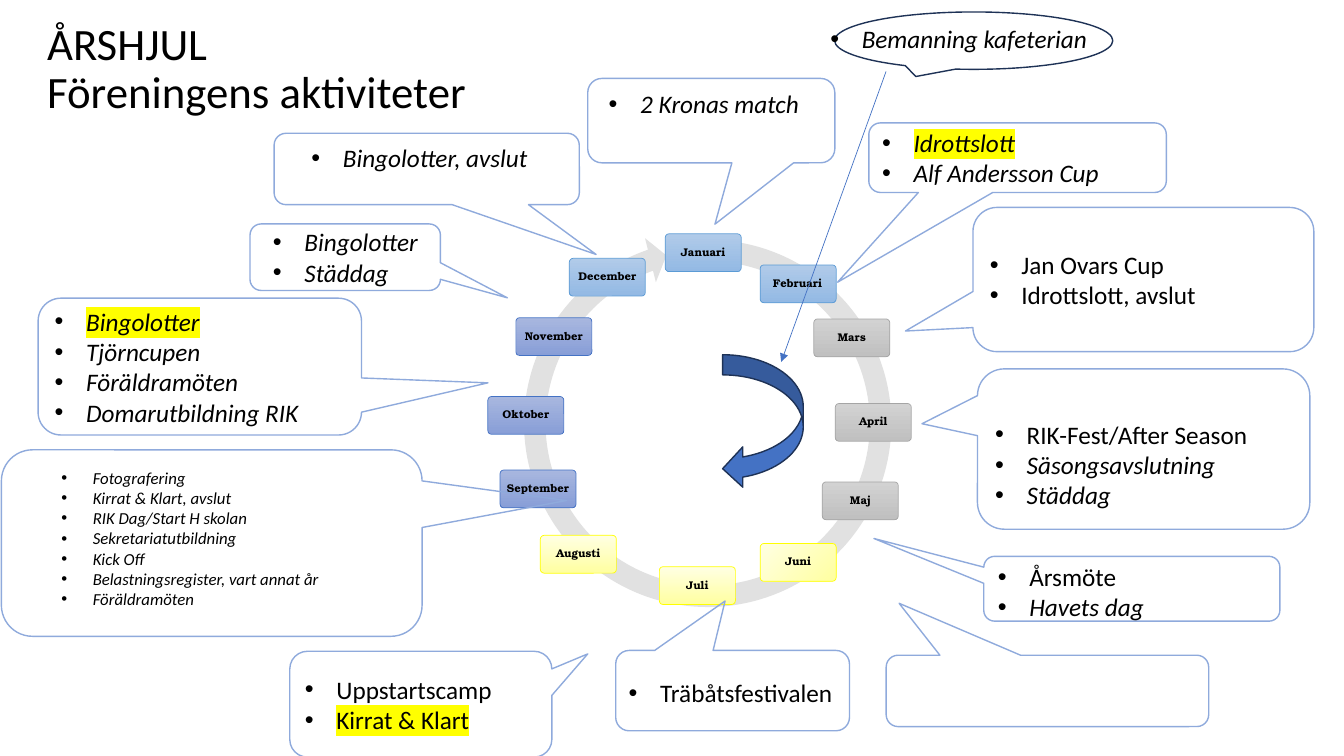
from dataclasses import dataclass
from lxml.etree import SubElement
from pptx import Presentation
from pptx.dml.color import RGBColor
from pptx.enum.shapes import MSO_CONNECTOR, MSO_SHAPE
from pptx.enum.text import MSO_ANCHOR, PP_ALIGN
from pptx.oxml import parse_xml
from pptx.oxml.ns import nsdecls, qn
from pptx.util import Pt


@dataclass(frozen=True)
class Theme:
    """Colours, fonts and type sizes of the slide."""
    body: str = "Calibri"
    serif: str = "TeX Gyre Bonum"
    title: int = 32
    text: int = 18
    small: int = 12
    month: int = 8
    ink: str = "000000"
    mark: str = "FFFF00"
    ring: str = "E1E1E1"
    edge: str = "8FAADC"
    blue: str = "4472C4"
    navy: str = "1E3256"
    winter: tuple = ("B1CBE9", "93B9E4", "5B9BD5", 270)
    spring: tuple = ("D2D2D2", "C0C0C0", "A5A5A5", 270)
    summer: tuple = ("FFFFA0", "FFFFE3", "FFFF00", 90)
    autumn: tuple = ("A8B7DF", "889ED7", "4472C4", 270)


T = Theme()

MONTHS = [
    ("Januari", 475.2, 167, T.winter),
    ("Februari\t", 543, 189.2, T.winter),
    ("Mars", 581.3, 227.8, T.spring),
    ("April", 596.7, 288.2, T.spring),
    ("Maj", 587.4, 344.2, T.spring),
    ("Juni", 543, 388.2, T.summer[:3] + (135,)),
    ("Juli", 471, 404.8, T.summer),
    ("Augusti", 386, 382.4, T.summer),
    ("September", 357.2, 335.7, T.autumn),
    ("Oktober", 348.5, 283.2, T.autumn),
    ("November", 368.5, 226.9, T.autumn),
    ("December", 406.7, 184.5, T.winter),
]

CALLOUTS = [
    ((620.6, 87.8, 212.5, 49.7), (-0.605, 1.79),
     [("Idrottslott", "ih"), ("Alf Andersson Cup", "i")]),
    ((419.8, 56, 176.5, 60.3), (0.015, 1.227), []),
    ((195.8, 95.2, 218, 51), (0.555, 1.198), []),
    ((178.6, 160, 136, 47.5), (0.852, 0.611), []),
    ((27.2, 213, 231, 97.7), (0.891, 0.119),
     [("Bingolotter", "ih"), ("Tjörncupen", "i"),
      ("Föräldramöten", "i"), ("Domarutbildning RIK", "i")]),
    ((439.8, 464.6, 167, 57.4), (-0.032, -1.115), []),
    ((698.2, 263.5, 237.4, 114.5), (-0.667, -0.158),
     [("RIK-Fest/After Season", ""), ("Säsongsavslutning", "i"),
      ("Städdag", "i")]),
    ((1, 321.3, 300.5, 133.2), (0.843, -0.228), []),
    ((695, 148.2, 243.5, 103), (-0.698, 0.357),
     [("Jan Ovars Cup", ""), ("Idrottslott, avslut", "")]),
    ((633, 468, 230.4, 51), (-0.46, -1.228), []),
    ((702.7, 397.4, 211.5, 46.3), (-0.871, -0.776), []),
    ((207, 465.2, 187.2, 75.6), (0.637, -0.475),
     [("Uppstartscamp", ""), ("Kirrat & Klart", "h")]),
]

NOTES = [
    ((705.6, 397.4, 178.6, 51), T.text,
     [("Årsmöte", ""), ("Havets dag", "i")]),
    ((36.7, 330.5, 254.2, 108.7), T.small,
     [(text, "i") for text in (
         "Fotografering", "Kirrat & Klart, avslut",
         "RIK Dag/Start H skolan", "Sekretariatutbildning", "Kick Off",
         "Belastningsregister, vart annat år", "Föräldramöten")]),
    ((187.9, 158.4, 178.6, 51), T.text,
     [("Bingolotter", "i"), ("Städdag", "i")]),
    ((215.3, 98, 178.6, 29), T.text, [("Bingolotter, avslut", "i")]),
    ((427.7, 59.8, 178.6, 29), T.text, [("2 Kronas match", "i")]),
    ((442, 480.2, 178.6, 29), T.text, [("Träbåtsfestivalen", "")]),
    ((586, 13, 218.2, 29), T.text, [("Bemanning kafeterian", "i")]),
]


def tint(code):
    """Turn a hex code into a colour."""
    return RGBColor.from_string(code)


def put(para, text, size, face=T.body, style=""):
    """Add one run; i is italic, b is bold, h is marked."""
    run = para.add_run()
    run.text = text
    font = run.font
    font.size, font.name = Pt(size), face
    font.italic, font.bold = "i" in style, "b" in style
    font.color.rgb = tint(T.ink)
    if "h" in style:
        fill = run._r.rPr.find(qn("a:solidFill"))
        fill.addnext(parse_xml(
            f'<a:highlight {nsdecls("a")}><a:srgbClr val="{T.mark}"/>'
            '</a:highlight>'))


def bullets(frame, items, size):
    """Fill a frame with a bullet list."""
    frame.word_wrap = True
    for n, (text, style) in enumerate(items):
        para = frame.add_paragraph() if n else frame.paragraphs[0]
        para.alignment = PP_ALIGN.LEFT
        props = para._p.get_or_add_pPr()
        props.set("marL", str(Pt(22.5)))
        props.set("indent", str(-Pt(22.5)))
        SubElement(props, qn("a:buFont")).set("typeface", "Arial")
        SubElement(props, qn("a:buChar")).set("char", "•")
        put(para, text, size, style=style)


def shape(slide, kind, box, fill=None, line=None, width=1.0, adj=()):
    """Add a flat preset shape."""
    item = slide.shapes.add_shape(kind, *map(Pt, box))
    item.shadow.inherit = False
    for n, value in enumerate(adj):
        item.adjustments[n] = value
    if fill:
        item.fill.solid()
        item.fill.fore_color.rgb = tint(fill)
    else:
        item.fill.background()
    if line:
        item.line.color.rgb = tint(line)
        item.line.width = Pt(width)
    else:
        item.line.fill.background()
    return item


def month(slide, name, left, top, look):
    """Add a month tile with a gradient."""
    start, end, line, angle = look
    tile = shape(slide, MSO_SHAPE.ROUNDED_RECTANGLE, (left, top, 54.3, 27),
                 line=line, width=0.5, adj=(0.1,))
    tile.fill.gradient()
    tile.fill.gradient_angle = angle
    for stop, code in zip(tile.fill.gradient_stops, (start, end)):
        stop.color.rgb = tint(code)
    frame = tile.text_frame
    frame.word_wrap = True
    frame.margin_left = frame.margin_right = Pt(3.5)
    frame.margin_top = frame.margin_bottom = Pt(3.5)
    para = frame.paragraphs[0]
    para.alignment, para.line_spacing = PP_ALIGN.CENTER, 0.9
    put(para, name, T.month, T.serif, "b")


def callout(slide, box, tip, items):
    """Add a speech bubble, with a list if it has items."""
    bubble = shape(slide, MSO_SHAPE.ROUNDED_RECTANGULAR_CALLOUT, box,
                   line=T.edge, adj=(*tip, 0.167))
    if items:
        bullets(bubble.text_frame, items, T.text)
    return bubble


def note(slide, box, size, items):
    """Add a free list."""
    bullets(slide.shapes.add_textbox(*map(Pt, box)).text_frame, items, size)


def title(slide, *lines):
    """Add the heading."""
    frame = slide.shapes.add_textbox(Pt(26.6), Pt(13), Pt(393), Pt(74)).text_frame
    frame.word_wrap = True
    frame.vertical_anchor = MSO_ANCHOR.MIDDLE
    para = frame.paragraphs[0]
    para.line_spacing = 0.9
    for n, text in enumerate(lines):
        if n:
            para.add_line_break()
        put(para, text, T.title)


def arrow(slide, *ends):
    """Add a thin line with an arrowhead."""
    line = slide.shapes.add_connector(MSO_CONNECTOR.STRAIGHT, *map(Pt, ends))
    line.line.color.rgb = tint(T.blue)
    line.line.width = Pt(0.5)
    SubElement(line.line._get_or_add_ln(), qn("a:tailEnd")).set("type", "triangle")
    SubElement(line._element.spPr, qn("a:effectLst"))


def main():
    """Build the slide and save it."""
    deck = Presentation()
    deck.slide_width, deck.slide_height = Pt(960), Pt(540)
    slide = deck.slides.add_slide(deck.slide_layouts[6])
    title(slide, "ÅRSHJUL", "Föreningens aktiviteter")
    shape(slide, MSO_SHAPE.CIRCULAR_ARROW, (365.8, 162.7, 279.4, 279.4),
          fill=T.ring, adj=(0.055, 3.307, 150.402, 166.55, 0.058))
    for item in MONTHS:
        month(slide, *item)
    for box, tip, items in CALLOUTS:
        bubble = callout(slide, box, tip, items)
        if len(items) == 3:
            bubble.text_frame.margin_top = Pt(25.6)
    for item in NOTES[:-1]:
        note(slide, *item)
    shape(slide, MSO_SHAPE.CURVED_LEFT_ARROW, (516.2, 253.4, 57.6, 95.8),
          fill=T.blue, line=T.navy)
    arrow(slide, 632.9, 51.1, 558, 258.5)
    shape(slide, MSO_SHAPE.OVAL_CALLOUT, (596.2, 8.6, 198.7, 41), line=T.navy)
    note(slide, *NOTES[-1])
    deck.save("out.pptx")


if __name__ == "__main__":
    main()
